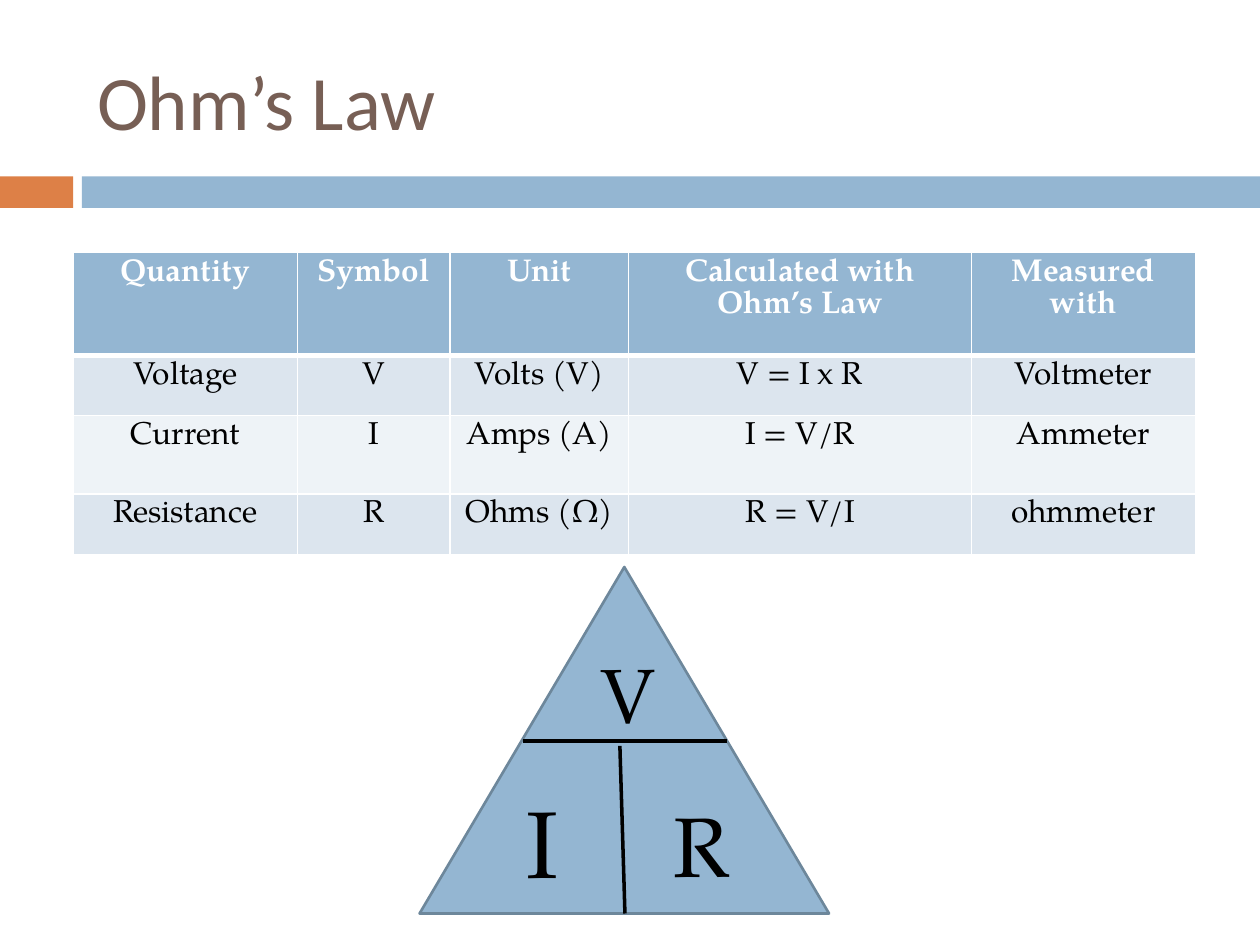
from lxml import etree
from pptx import Presentation
from pptx import util as u
from pptx.dml.color import RGBColor
from pptx.enum import shapes, text
from pptx.oxml.ns import qn

I, Pt = u.Inches, u.Pt
BLUE, SERIF = "94B6D2", "TeX Gyre Pagella"


def paint(fmt, color):
    fill = fmt.fill
    fill.solid()
    fill.fore_color.rgb = RGBColor.from_string(color)


def write(para, words, size, color, font=SERIF, bold=False):
    run = para.add_run()
    run.text = words
    run.font.size = Pt(size)
    run.font.name = font
    run.font.bold = bold
    paint(run.font, color)


deck = Presentation()
deck.slide_width, deck.slide_height = I(10), I(7.5)
slide = deck.slides.add_slide(deck.slide_layouts[5])
items = slide.shapes

for left, width, color in [(0, 0.58, "DD8047"), (0.65, 9.35, BLUE)]:
    bar = items.add_shape(shapes.MSO_SHAPE.RECTANGLE, I(left), I(1.4), I(width), I(0.25))
    bar.shadow.inherit = False
    paint(bar, color)
    bar.line.fill.background()

title = items.title
title.left, title.top, title.width, title.height = I(0.67), I(0.25), I(8.92), I(1.08)
frame = title.text_frame
frame.vertical_anchor = text.MSO_ANCHOR.MIDDLE
frame.auto_size = text.MSO_AUTO_SIZE.NONE
head = frame.paragraphs[0]
head.alignment = text.PP_ALIGN.LEFT
write(head, "Ohm’s Law", 44, "775F55", "Calibri")

rows = [
    ("Quantity", "Symbol", "Unit", "Calculated with Ohm’s Law", "Measured with"),
    ("Voltage", "V", "Volts (V)", "V = I x R", "Voltmeter"),
    ("Current", "I", "Amps (A)", "I = V/R", "Ammeter"),
    ("Resistance", "R", "Ohms (Ω)", "R = V/I", "ohmmeter"),
]
fills = [BLUE, "DCE5EE", "EEF3F7", "DCE5EE"]
table = items.add_table(4, 5, I(0.58), I(2), I(8.91), I(2.4)).table
for col, width in zip(table.columns, [1.78, 1.21, 1.42, 2.72, 1.78]):
    col.width = I(width)
for row, height in zip(table.rows, [0.82, 0.48, 0.62, 0.48]):
    row.height = I(height)

for r, row in enumerate(rows):
    for c, words in enumerate(row):
        cell = table.cell(r, c)
        para = cell.text_frame.paragraphs[0]
        para.alignment = text.PP_ALIGN.CENTER
        para.line_spacing = Pt(18)
        write(para, words, 18, "000000" if r else "FFFFFF", bold=r == 0)
        props = cell._tc.get_or_add_tcPr()
        for side in "LRTB":
            thick = 3 if (r, side) in [(0, "B"), (1, "T")] else 1
            edge = etree.SubElement(props, qn(f"a:ln{side}"), w=str(Pt(thick)))
            solid = etree.SubElement(edge, qn("a:solidFill"))
            etree.SubElement(solid, qn("a:srgbClr"), val="FFFFFF")
        paint(cell, fills[r])

wedge = items.add_shape(shapes.MSO_SHAPE.ISOSCELES_TRIANGLE, I(3.33), I(4.5), I(3.25), I(2.75))
wedge.shadow.inherit = False
paint(wedge, BLUE)
paint(wedge.line, "6D879B")
wedge.line.width = Pt(1.5)

for x1, y1, x2, y2 in [(4.15, 5.88, 5.77, 5.88), (4.92, 5.92, 4.96, 7.25)]:
    line = items.add_connector(shapes.MSO_CONNECTOR.STRAIGHT, I(x1), I(y1), I(x2), I(y2))
    paint(line.line, "000000")
    line.line.width = Pt(2)
    etree.SubElement(line._element.spPr, qn("a:effectLst"))

for mark, left, top, height, size in [
    ("R", 5.25, 6.25, 0.91, 48),
    ("V", 4.67, 5.08, 0.84, 44),
    ("I", 4.08, 6.17, 1.01, 54),
]:
    frame = items.add_textbox(I(left), I(top), I(0.83), I(height)).text_frame
    frame.word_wrap = True
    frame.auto_size = text.MSO_AUTO_SIZE.SHAPE_TO_FIT_TEXT
    write(frame.paragraphs[0], mark, size, "000000")

deck.save("out.pptx")
